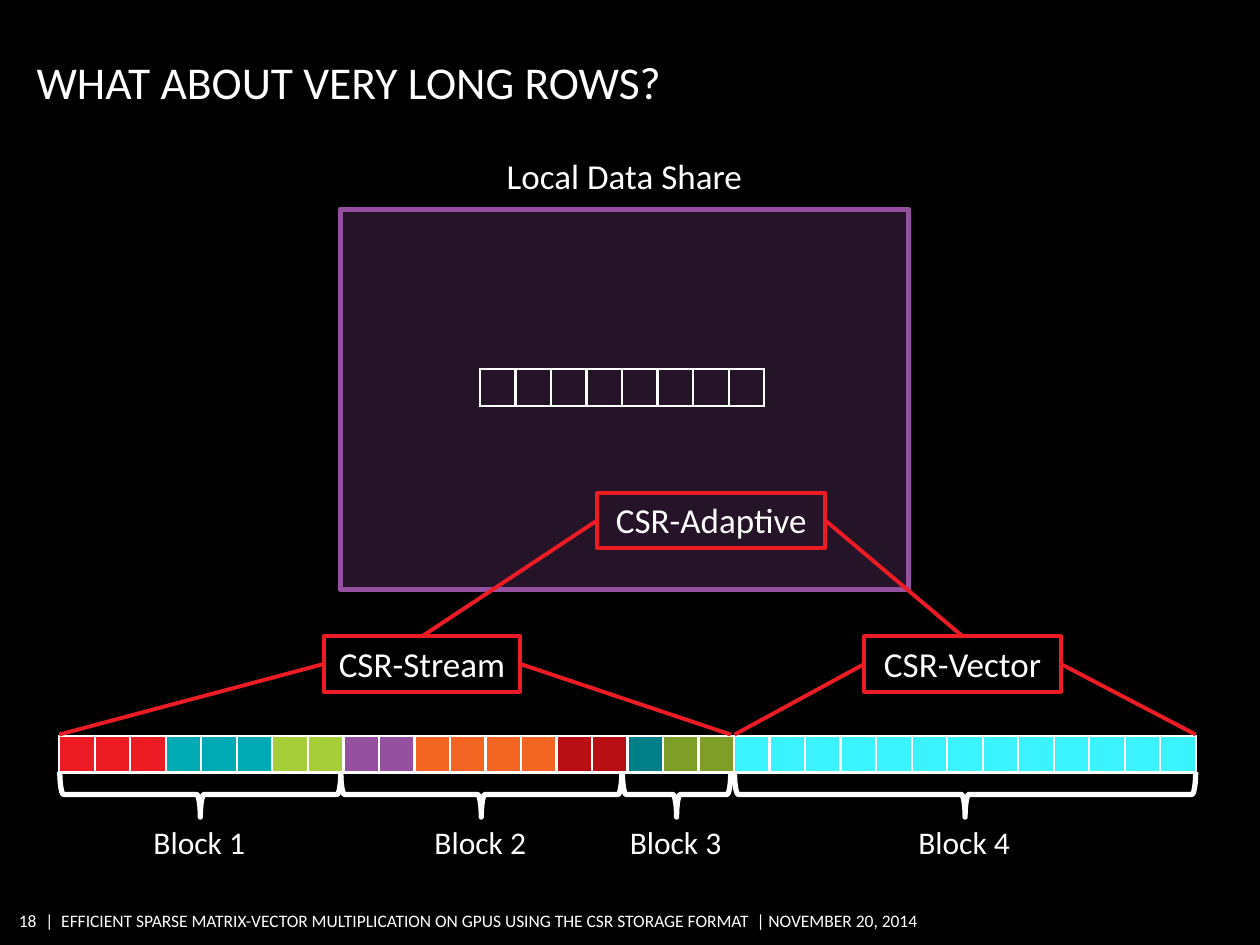
from dataclasses import dataclass
from itertools import chain, repeat

from lxml import etree
from pptx import Presentation
from pptx import util as u
from pptx.dml.color import RGBColor
from pptx.enum import shapes, text
from pptx.oxml import ns

COLUMNS, ROWS = 100, 75
TOP, LEFT, BOTTOM, RIGHT = range(4)


@dataclass(frozen=True)
class Theme:
    font: str = "Calibri"
    background: str = "000000"
    ink: str = "FFFFFF"
    accent: str = "ED1C24"
    share_fill: str = "4B2850"
    share_line: str = "9650A0"
    title: int = 26
    label: int = 20
    block: int = 18
    footer: int = 10
    heavy: float = 3
    medium: float = 2.25
    thin: float = 1.5


class Board:
    def __init__(self, deck, theme):
        self.theme = theme
        self.column = deck.slide_width / COLUMNS
        self.row = deck.slide_height / ROWS
        self.slide = deck.slides.add_slide(deck.slide_layouts[6])
        self.paint(self.slide.background.fill, theme.background)

    def place(self, x, y, w, h):
        return (round(x * self.column), round(y * self.row),
                round(w * self.column), round(h * self.row))

    def paint(self, fill, color):
        fill.solid()
        fill.fore_color.rgb = RGBColor.from_string(color)

    def stroke(self, line, color, width):
        self.paint(line.fill, color)
        line.width = u.Pt(width)

    def letter(self, frame, words, size, align, anchor, wrap=True):
        frame.word_wrap = wrap
        frame.vertical_anchor = anchor
        paragraph = frame.paragraphs[0]
        paragraph.text = words
        paragraph.alignment = align
        paragraph.font.size = u.Pt(size)
        paragraph.font.name = self.theme.font
        paragraph.font.color.rgb = RGBColor.from_string(self.theme.ink)

    def caption(self, words, box, size, align=text.PP_ALIGN.LEFT,
                anchor=text.MSO_ANCHOR.TOP, wrap=True, insets=None):
        frame = self.slide.shapes.add_textbox(*self.place(*box)).text_frame
        if insets:
            (frame.margin_left, frame.margin_top, frame.margin_right,
             frame.margin_bottom) = map(u.Inches, insets)
        self.letter(frame, words, size, align, anchor, wrap)

    def outline(self, preset, box, color, width):
        shape = self.slide.shapes.add_shape(preset, *self.place(*box))
        shape.shadow.inherit = False
        shape.fill.background()
        self.stroke(shape.line, color, width)
        return shape

    def panel(self, box, fill, line, opacity):
        panel = self.outline(shapes.MSO_SHAPE.RECTANGLE, box, line, self.theme.heavy)
        self.paint(panel.fill, fill)
        color = panel._element.spPr.find(ns.qn("a:solidFill"))[0]
        etree.SubElement(color, ns.qn("a:alpha"), val=str(opacity * 1000))

    def kernel(self, name, box):
        kernel = self.outline(shapes.MSO_SHAPE.RECTANGLE, box,
                              self.theme.accent, self.theme.medium)
        self.letter(kernel.text_frame, name, self.theme.label,
                    text.PP_ALIGN.CENTER, text.MSO_ANCHOR.TOP)
        return kernel

    def branch(self, kernel, side, point=(0, 0), child=None):
        x, y, _, _ = self.place(*point, 0, 0)
        branch = self.slide.shapes.add_connector(
            shapes.MSO_CONNECTOR.STRAIGHT, x, y, x, y)
        branch.begin_connect(kernel, side)
        if child is not None:
            branch.end_connect(child, TOP)
        self.stroke(branch.line, self.theme.accent, self.theme.medium)
        etree.SubElement(branch._element.spPr, ns.qn("a:effectLst"))

    def brace(self, name, start, end, top, depth):
        middle, span = (start + end) / 2, end - start
        box = (middle - depth / 2, top + depth / 2 - span / 2, depth, span)
        brace = self.outline(shapes.MSO_SHAPE.LEFT_BRACE, box,
                             self.theme.ink, self.theme.heavy)
        brace.rotation = 270
        self.caption(name, (middle - 4.7, 64.8, 9.4, 4), self.theme.block, wrap=False)

    def strip(self, x, y, cell_width, height, colors):
        box = self.place(x, y, cell_width * len(colors), height)
        table = self.slide.shapes.add_table(1, len(colors), *box).table
        table.first_row = table.horz_banding = False
        for column, cell, color in zip(table.columns, table.rows[0].cells, colors):
            column.width = round(cell_width * self.column)
            self.edge(cell)
            if color:
                self.paint(cell.fill, color)
            else:
                cell.fill.background()

    def edge(self, cell):
        cell.margin_left = cell.margin_right = cell.margin_top = cell.margin_bottom = 0
        paragraph = cell.text_frame.paragraphs[0]
        etree.SubElement(paragraph._p, ns.qn("a:endParaRPr"),
                         sz=str(self.theme.footer * 100))
        for side in ("lnL", "lnR", "lnT", "lnB"):
            line = etree.SubElement(cell._tc.tcPr, ns.qn("a:" + side),
                                    w=str(int(u.Pt(self.theme.thin))))
            fill = etree.SubElement(line, ns.qn("a:solidFill"))
            etree.SubElement(fill, ns.qn("a:srgbClr"), val=self.theme.ink)


def main():
    deck = Presentation()
    deck.slide_width, deck.slide_height = u.Inches(10), u.Inches(7.5)
    theme = Theme()
    board = Board(deck, theme)
    middle = text.MSO_ANCHOR.MIDDLE

    footer_insets = (0, 0.04, 0, 0.04)
    board.caption("18", (1.3, 71.8, 1.6, 2.6), theme.footer, text.PP_ALIGN.RIGHT,
                  middle, False, footer_insets)
    board.caption("|  EFFICIENT SPARSE MATRIX-VECTOR MULTIPLICATION ON GPUS USING "
                  "THE CSR STORAGE FORMAT  | NOVEMBER 20, 2014",
                  (3.6, 71.8, 70.8, 2.6), theme.footer, anchor=middle,
                  wrap=False, insets=footer_insets)
    board.caption("WHAT ABOUT VERY LONG ROWS?", (2.9, 3.4, 82, 5.2), theme.title,
                  anchor=text.MSO_ANCHOR.BOTTOM, insets=(0, 0.05, 0, 0))

    cell_width, cell_height = 2.82, 2.9
    matrix_rows = [("ED1C24", 3), ("00AAB5", 3), ("A6CE39", 2), ("9650A0", 2),
                   ("F26522", 4), ("B80F15", 2), ("007F88", 1), ("7E9E27", 2),
                   ("3AF3FF", 13)]
    values = list(chain.from_iterable(repeat(*row) for row in matrix_rows))
    board.strip(4.7, 58.4, cell_width, cell_height, values)

    blocks = [(4.75, 27.05), (27.05, 49.35), (49.4, 58), (58.3, 94.9)]
    for number, (start, end) in enumerate(blocks, 1):
        board.brace(f"Block {number}", start, end, 61.25, 3.6)

    board.panel((27, 16.6, 45.1, 30.2), theme.share_fill, theme.share_line, 50)
    board.caption("Local Data Share", (27, 11.8, 45.1, 4.4), theme.label,
                  text.PP_ALIGN.CENTER)
    board.strip(38.1, 29.3, cell_width, cell_height, [None] * 8)

    adaptive = board.kernel("CSR-Adaptive", (47.4, 39.1, 18.1, 4.4))
    children = [("CSR-Stream", 25.7, LEFT, 4.7, 58),
                ("CSR-Vector", 68.6, RIGHT, 58.3, 94.9)]
    for name, x, side, start, end in children:
        kernel = board.kernel(name, (x, 50.5, 15.6, 4.4))
        board.branch(kernel, LEFT, (start, 58.3))
        board.branch(kernel, RIGHT, (end, 58.3))
        board.branch(adaptive, side, child=kernel)

    deck.save("out.pptx")


if __name__ == "__main__":
    main()
